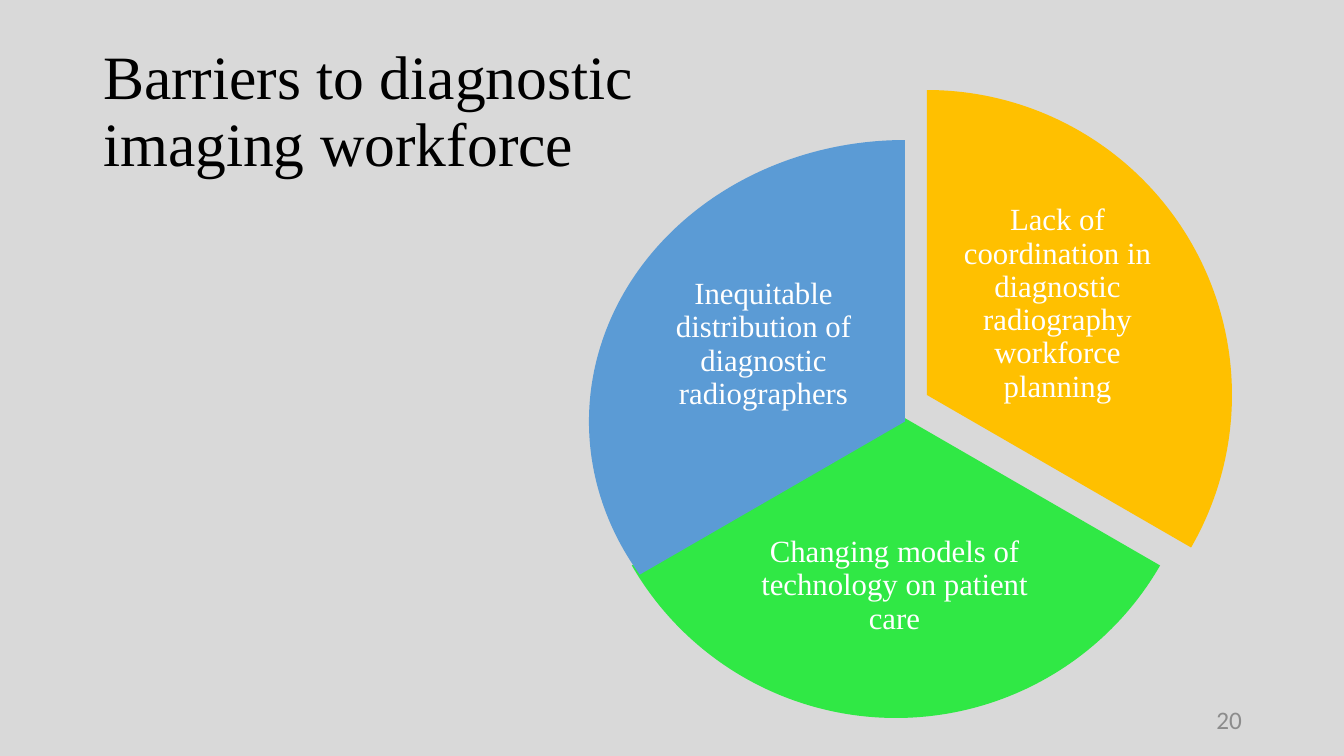
import pptx
import pptx.util
import pptx.dml.color
import pptx.enum.shapes
import pptx.enum.text

ALIGN = pptx.enum.text.PP_ALIGN
COLOURS = {
    "background": "D9D9D9",
    "title": "000000",
    "number": "8C8C8C",
    "label": "FFFFFF",
    "amber": "FFC000",
    "green": "30E845",
    "blue": "5B9BD5",
}


def px(*lengths):
    return [pptx.util.Emu(round(length * 914400 / 100.8)) for length in lengths]


def write(box, words, colour, font, size, align, inset=None):
    frame = box.text_frame
    frame_format = {
        "word_wrap": True,
        "auto_size": pptx.enum.text.MSO_AUTO_SIZE.NONE,
        "vertical_anchor": pptx.enum.text.MSO_ANCHOR.MIDDLE,
    }
    if inset is not None:
        for side in ("left", "top", "right", "bottom"):
            frame_format[f"margin_{side}"] = px(inset)[0]
    for name, value in frame_format.items():
        setattr(frame, name, value)
    para = frame.paragraphs[0]
    para.alignment = align
    para.line_spacing = 0.9
    span = para.add_run()
    span.text = words
    for name, value in {"name": font, "size": pptx.util.Pt(size)}.items():
        setattr(span.font, name, value)
    span.font.color.rgb = pptx.dml.color.RGBColor.from_string(COLOURS[colour])


deck = pptx.Presentation()
deck.slide_width, deck.slide_height = px(1344, 756)
page = deck.slides.add_slide(deck.slide_layouts.get_by_name("Title Only"))
page.background.fill.solid()
page.background.fill.fore_color.rgb = pptx.dml.color.RGBColor.from_string(COLOURS["background"])

title = page.shapes.title
title.left, title.top, title.width, title.height = px(93, 40, 589, 146)
write(title, "Barriers to diagnostic imaging workforce", "title", "Times New Roman", 44, ALIGN.LEFT)

number = page.shapes.add_textbox(*px(950, 701, 302, 40))
write(number, "20", "number", "Calibri", 18, ALIGN.RIGHT)

barriers = [
    ("Lack of coordination in diagnostic radiography workforce planning",
     "amber", (622, 90, 610, 610), (954, 202, 207, 204), (162, 18)),
    ("Changing models of technology on patient care",
     "green", (591, 108, 610, 610), (757, 492, 275, 188), (18, 90)),
    ("Inequitable distribution of diagnostic radiographers",
     "blue", (589, 140, 632, 563), (656, 251, 215, 187), (90, 162)),
]
for words, colour, slice_place, label_place, angles in barriers:
    pie = page.shapes.add_shape(pptx.enum.shapes.MSO_SHAPE.PIE, *px(*slice_place))
    for index, angle in enumerate(angles):
        pie.adjustments[index] = angle
    pie.shadow.inherit = False
    pie.fill.solid()
    pie.fill.fore_color.rgb = pptx.dml.color.RGBColor.from_string(COLOURS[colour])
    pie.line.fill.background()
    label = page.shapes.add_textbox(*px(*label_place))
    write(label, words, "label", "Times New Roman", 22, ALIGN.CENTER, 3)

deck.save("out.pptx")
